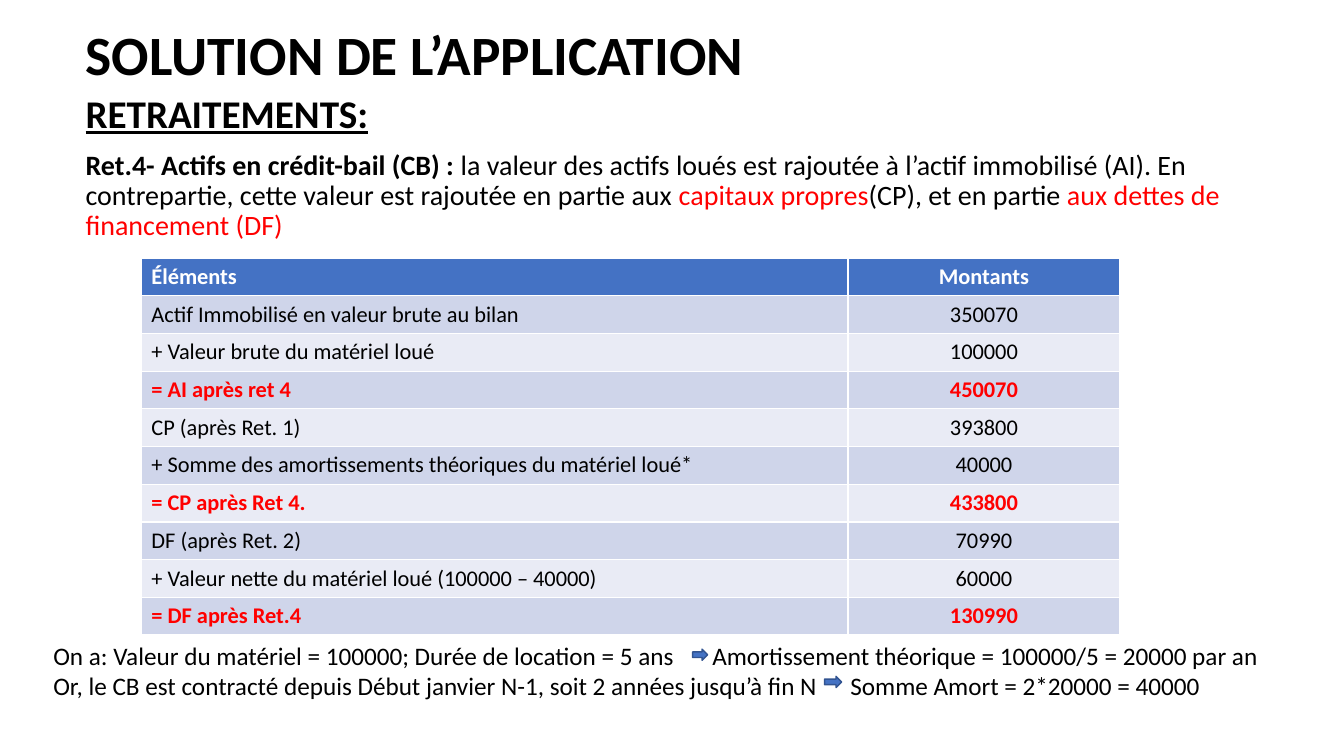
import dataclasses

import pptx
import pptx.dml.color
import pptx.enum.shapes
import pptx.enum.text
import pptx.oxml
import pptx.oxml.ns
import pptx.util

Pt = pptx.util.Pt
Align = pptx.enum.text.PP_ALIGN
Anchor = pptx.enum.text.MSO_ANCHOR


def rgb(value):
    return pptx.dml.color.RGBColor.from_string(value)


@dataclasses.dataclass(frozen=True)
class Theme:
    font: str = "Calibri"
    ink: str = "000000"
    paper: str = "FFFFFF"
    accent: str = "4472C4"
    arrow_line: str = "325491"
    highlight: str = "FF0000"
    bands: tuple = ("CFD5EA", "E9EBF5")
    title: float = 39.6
    heading: float = 28
    body: float = 20
    note: float = 18
    cell: float = 16


THEME = Theme()

ADJUSTMENT = [
    ("Ret.4- Actifs en crédit-bail (CB) : ", True, THEME.ink),
    ("la valeur des actifs loués est rajoutée à l’actif immobilisé (AI). En contrepartie, "
     "cette valeur est rajoutée en partie aux ", False, THEME.ink),
    ("capitaux propres", False, THEME.highlight),
    ("(CP), et en partie ", False, THEME.ink),
    ("aux dettes de financement (DF)", False, THEME.highlight),
]

AMOUNTS = [
    ("Éléments", "Montants"),
    ("Actif Immobilisé en valeur brute au bilan", "350070"),
    ("+ Valeur brute du matériel loué", "100000"),
    ("= AI après ret 4", "450070"),
    ("CP (après Ret. 1)", "393800"),
    ("+ Somme des amortissements théoriques du matériel loué*", "40000"),
    ("= CP après Ret 4.", "433800"),
    ("DF (après Ret. 2)", "70990"),
    ("+ Valeur nette du matériel loué (100000 – 40000)", "60000"),
    ("= DF après Ret.4", "130990"),
]

# Premise, conclusion, tab stop of the conclusion, then left, top and width of the arrow
DEDUCTIONS = [
    ("On a: Valeur du matériel = 100000; Durée de location = 5 ans",
     "Amortissement théorique = 100000/5 = 20000 par an", 470.7, (463.7, 10.1, 10.8)),
    ("Or, le CB est contracté depuis Début janvier N-1, soit 2 années jusqu’à fin N",
     "Somme Amort = 2*20000 = 40000", 569.3, (558, 29.5, 12.2)),
]


def style(font, size, color=THEME.ink, bold=False):
    font.name = THEME.font
    font.size = Pt(size)
    font.bold = bold
    font.color.rgb = rgb(color)


def add_frame(slide, left, top, width, height):
    """Add a wrapping text box and return its text frame."""
    frame = slide.shapes.add_textbox(Pt(left), Pt(top), Pt(width), Pt(height)).text_frame
    frame.word_wrap = True
    return frame


def add_title(slide, left, top, width, height):
    frame = add_frame(slide, left, top, width, height)
    frame.vertical_anchor = Anchor.MIDDLE
    title = frame.paragraphs[0]
    title.text = "SOLUTION DE L’APPLICATION"
    title.line_spacing = 0.9
    style(title.font, THEME.title, bold=True)


def add_explanation(slide, left, top, width, height):
    frame = add_frame(slide, left, top, width, height)
    heading, adjustment = frame.paragraphs[0], frame.add_paragraph()
    for paragraph in (heading, adjustment):
        paragraph.line_spacing = 0.9
        paragraph.space_before = Pt(10)
    heading.text = "RETRAITEMENTS:"
    style(heading.font, THEME.heading, bold=True)
    heading.font.underline = True
    for text, bold, color in ADJUSTMENT:
        run = adjustment.add_run()
        run.text = text
        style(run.font, THEME.body, color, bold)


def add_amounts(slide, left, top, width, height):
    table = slide.shapes.add_table(
        len(AMOUNTS), 2, Pt(left), Pt(top), Pt(width), Pt(height)).table
    label_width = 504.7
    table.columns[0].width = Pt(label_width)
    table.columns[1].width = Pt(width - label_width)
    for index, entry in enumerate(AMOUNTS):
        table.rows[index].height = Pt(height / len(AMOUNTS))
        is_header, is_total = index == 0, entry[0].startswith("=")
        fill = THEME.accent if is_header else THEME.bands[(index - 1) % 2]
        color = THEME.paper if is_header else THEME.highlight if is_total else THEME.ink
        for column, text in enumerate(entry):
            cell = table.cell(index, column)
            cell.fill.solid()
            cell.fill.fore_color.rgb = rgb(fill)
            paragraph = cell.text_frame.paragraphs[0]
            paragraph.text = text
            paragraph.alignment = (Align.LEFT, Align.CENTER)[column]
            style(paragraph.font, THEME.cell, color, is_header or is_total)


def add_tab_stop(paragraph, position):
    properties = paragraph._p.get_or_add_pPr()
    tabs = pptx.oxml.parse_xml(
        f'<a:tabLst {pptx.oxml.ns.nsdecls("a")}>'
        f'<a:tab pos="{int(Pt(position))}" algn="l"/></a:tabLst>')
    properties.insert(0, tabs)


def add_arrow(slide, left, top, width, height):
    arrow = slide.shapes.add_shape(
        pptx.enum.shapes.MSO_SHAPE.RIGHT_ARROW, Pt(left), Pt(top), Pt(width), Pt(height))
    arrow.shadow.inherit = False
    arrow.fill.solid()
    arrow.fill.fore_color.rgb = rgb(THEME.accent)
    arrow.line.color.rgb = rgb(THEME.arrow_line)
    arrow.line.width = Pt(1)


def add_deductions(slide, left, top, width, height):
    frame = add_frame(slide, left, top, width, height)
    for index, (premise, conclusion, stop, arrow) in enumerate(DEDUCTIONS):
        paragraph = frame.add_paragraph() if index else frame.paragraphs[0]
        paragraph.text = f"{premise}\t{conclusion}"
        style(paragraph.font, THEME.note)
        add_tab_stop(paragraph, stop)
        arrow_left, arrow_top, arrow_width = arrow
        add_arrow(slide, left + arrow_left, top + arrow_top, arrow_width, 8)


def main():
    presentation = pptx.Presentation()
    presentation.slide_width, presentation.slide_height = Pt(960), Pt(540)
    slide = presentation.slides.add_slide(presentation.slide_layouts[6])
    add_title(slide, 54, 28.8, 840, 25.2)
    add_explanation(slide, 54, 64, 840, 400)
    add_amounts(slide, 101, 184.3, 699, 269.3)
    add_deductions(slide, 31, 453.6, 885.6, 51)
    presentation.save("out.pptx")


if __name__ == "__main__":
    main()
